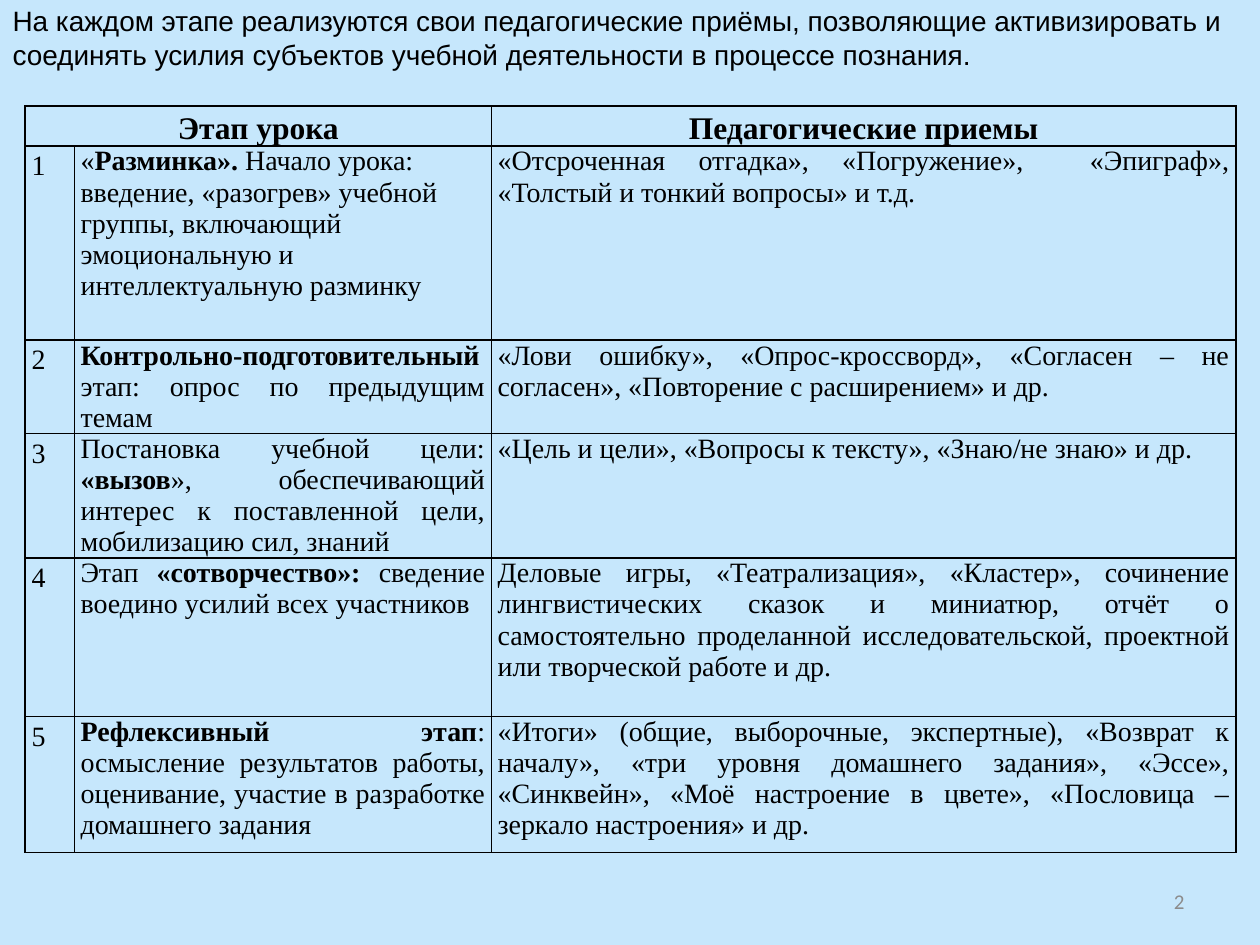
from lxml import etree
from pptx import Presentation
from pptx.dml.color import RGBColor
from pptx.enum.text import MSO_ANCHOR, MSO_AUTO_SIZE, PP_ALIGN
from pptx.oxml.ns import qn
from pptx.util import Inches, Pt

BACKGROUND = RGBColor(0xC6, 0xE7, 0xFC)
BLACK = RGBColor(0, 0, 0)
GRAY = RGBColor(0x8C, 0x8C, 0x8C)
SERIF = "Times New Roman"


def write(frame, runs, font=SERIF, size=16, color=BLACK, align=PP_ALIGN.LEFT, spacing=1.0):
    """Fill the first paragraph with (text, bold) runs."""
    paragraph = frame.paragraphs[0]
    paragraph.alignment = align
    paragraph.line_spacing = spacing
    for content, bold in runs:
        run = paragraph.add_run()
        run.text = content
        run.font.name = font
        run.font.size = Pt(size)
        run.font.bold = bold
        run.font.color.rgb = color


def style_cell(cell):
    """Set margins, no fill and thin black borders."""
    cell.margin_left = cell.margin_right = Inches(0.05)
    cell.margin_top = cell.margin_bottom = 0
    cell.fill.background()
    properties = cell._tc.get_or_add_tcPr()
    for index, side in enumerate(("lnL", "lnR", "lnT", "lnB")):
        line = etree.Element(qn(f"a:{side}"), w=str(Pt(1)))
        fill = etree.SubElement(line, qn("a:solidFill"))
        etree.SubElement(fill, qn("a:srgbClr"), val=str(BLACK))
        properties.insert(index, line)


presentation = Presentation()
presentation.slide_width = Inches(10)
presentation.slide_height = Inches(7.5)
slide = presentation.slides.add_slide(presentation.slide_layouts[5])
slide.background.fill.solid()
slide.background.fill.fore_color.rgb = BACKGROUND

# Introductory statement
title = slide.shapes.title
title.left, title.top = Inches(0), Inches(-0.02)
title.width, title.height = Inches(10), Inches(0.91)
title.text_frame.word_wrap = True
title.text_frame.auto_size = MSO_AUTO_SIZE.NONE
title.text_frame.vertical_anchor = MSO_ANCHOR.TOP
write(title.text_frame, [(
    "На каждом этапе реализуются свои педагогические приёмы, позволяющие активизировать "
    "и соединять усилия субъектов учебной деятельности в процессе познания.", False)],
    font="Arial")

# Lesson stages: runs of the stage description, then techniques
stages = [
    ([("«", False), ("Разминка». ", True),
      ("Начало урока: введение, «разогрев» учебной группы, включающий эмоциональную "
       "и интеллектуальную разминку", False)],
     "«Отсроченная отгадка», «Погружение»,  «Эпиграф», «Толстый и тонкий вопросы» и т.д."),
    ([("Контрольно-подготовительный", True),
      (" этап: опрос по предыдущим темам", False)],
     "«Лови ошибку», «Опрос-кроссворд», «Согласен – не согласен», "
     "«Повторение с расширением» и др."),
    ([("Постановка учебной цели: ", False), ("«вызов", True),
      ("», обеспечивающий интерес к поставленной цели, мобилизацию сил, знаний", False)],
     "«Цель и цели», «Вопросы к тексту», «Знаю/не знаю» и др."),
    ([("Этап ", False), ("«сотворчество»: ", True),
      ("сведение воедино усилий всех участников", False)],
     "Деловые игры, «Театрализация», «Кластер», сочинение лингвистических сказок и миниатюр, "
     "отчёт о самостоятельно проделанной исследовательской, проектной или творческой работе и др."),
    ([("Рефлексивный этап", True),
      (": осмысление результатов работы, оценивание, участие в разработке домашнего задания",
       False)],
     "«Итоги» (общие, выборочные, экспертные), «Возврат к началу», «три уровня домашнего "
     "задания», «Эссе», «Синквейн», «Моё настроение в цвете», «Пословица – зеркало "
     "настроения» и др."),
]

# Table grid
column_widths = [0.39, 3.31, 5.91]
row_heights = [0.18, 1.54, 0.54, 0.72, 1.26, 1.08]
table = slide.shapes.add_table(
    len(row_heights), len(column_widths), Inches(0.2), Inches(0.84),
    Inches(sum(column_widths)), Inches(sum(row_heights))).table
table.first_row = table.horz_banding = False
for column, width in zip(table.columns, column_widths):
    column.width = Inches(width)
for row, height in zip(table.rows, row_heights):
    row.height = Inches(height)
    for cell in row.cells:
        style_cell(cell)

# Header row
table.cell(0, 0).merge(table.cell(0, 1))
for column, heading in ((0, "Этап урока"), (2, "Педагогические приемы")):
    write(table.cell(0, column).text_frame, [(heading, True)],
          size=18, align=PP_ALIGN.CENTER, spacing=1.15)

# Stage rows
for number, (description, techniques) in enumerate(stages, start=1):
    write(table.cell(number, 0).text_frame, [(str(number), False)],
          align=PP_ALIGN.JUSTIFY, spacing=1.15)
    write(table.cell(number, 1).text_frame, description,
          align=PP_ALIGN.LEFT if number == 1 else PP_ALIGN.JUSTIFY)
    write(table.cell(number, 2).text_frame, [(techniques, False)], align=PP_ALIGN.JUSTIFY)

# Slide number
page = slide.shapes.add_textbox(Inches(7.17), Inches(6.95), Inches(2.33), Inches(0.4))
page.text_frame.word_wrap = True
page.text_frame.vertical_anchor = MSO_ANCHOR.MIDDLE
write(page.text_frame, [("2", False)], font="Calibri", size=12, color=GRAY,
      align=PP_ALIGN.RIGHT)

presentation.save("out.pptx")
